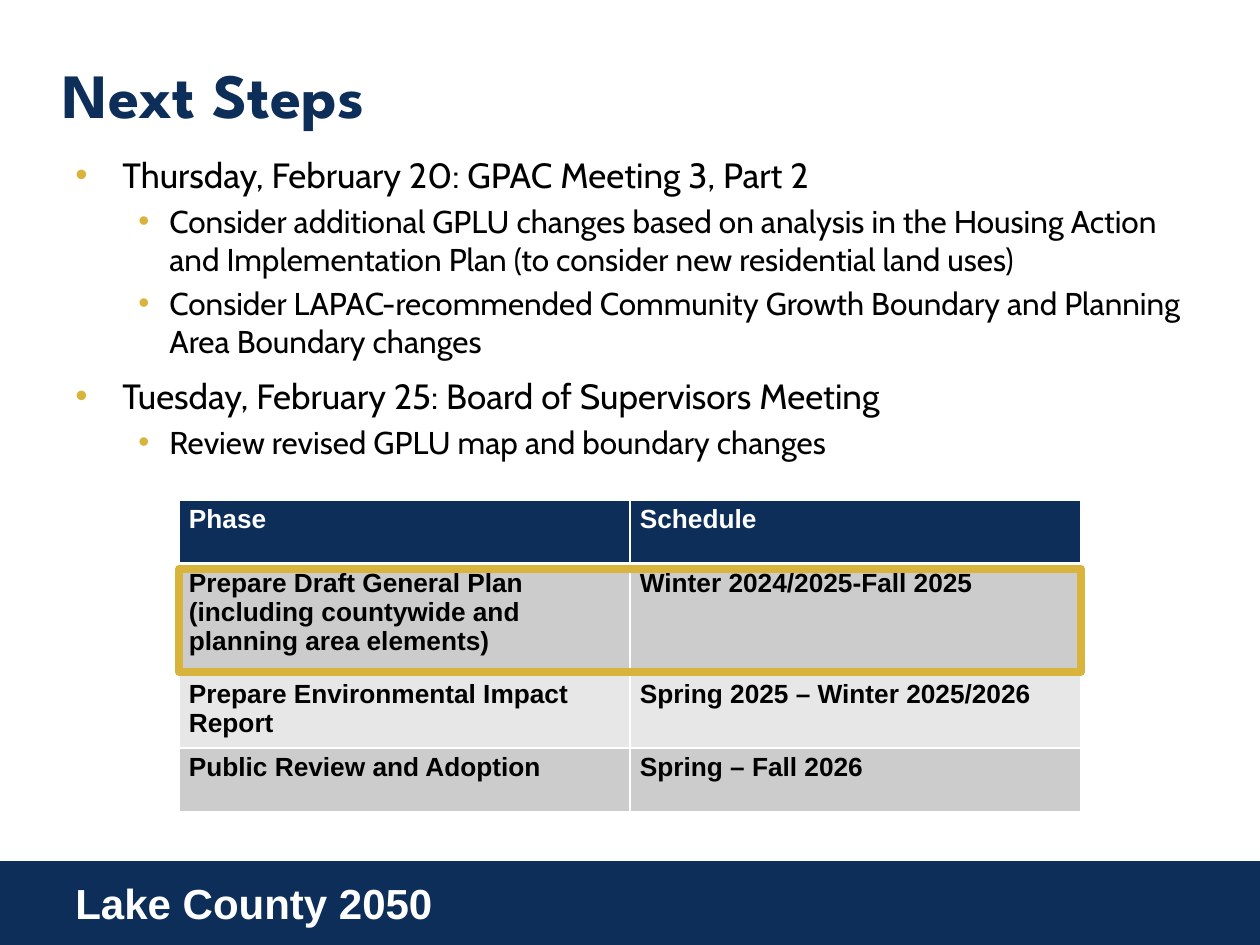
from typing import NamedTuple

from lxml import etree
from pptx import Presentation
from pptx import util as u
from pptx.dml.color import RGBColor
from pptx.enum import shapes, text
from pptx.oxml import ns

EMU_PER_PX = 914400 / 126
NAVY, GOLD, WHITE, BLACK = "0D2E58", "D8B43D", "FFFFFF", "000000"
DARK_GREY, LIGHT_GREY = "CCCCCC", "E7E7E7"


class Box(NamedTuple):
    left: int
    top: int
    width: int
    height: int


class Level(NamedTuple):
    size: int
    line_spacing: float
    space_before: float
    margin: int
    hanging: int


class Item(NamedTuple):
    level: Level
    words: str


class Row(NamedTuple):
    phase: str
    schedule: str
    height: int
    fill: str
    color: str = BLACK


MEETING = Level(20, 1.2, 4, 47, 47)
TOPIC = Level(18, 1.0, 3.6, 94, 31)

AGENDA = [
    Item(MEETING, "Thursday, February 20: GPAC Meeting 3, Part 2"),
    Item(TOPIC, "Consider additional GPLU changes based on analysis in the Housing Action "
                "and Implementation Plan (to consider new residential land uses)"),
    Item(TOPIC, "Consider LAPAC-recommended Community Growth Boundary and Planning "
                "Area Boundary changes"),
    Item(MEETING, "Tuesday, February 25: Board of Supervisors Meeting"),
    Item(TOPIC, "Review revised GPLU map and boundary changes"),
]

PHASES = [
    Row("Phase", "Schedule", 64, NAVY, WHITE),
    Row("Prepare Draft General Plan (including countywide and planning area elements)",
        "Winter 2024/2025-Fall 2025", 111, DARK_GREY),
    Row("Prepare Environmental Impact Report", "Spring 2025 – Winter 2025/2026", 64, LIGHT_GREY),
    Row("Public Review and Adoption", "Spring – Fall 2026", 64, DARK_GREY),
]


def px(length: int) -> u.Emu:
    return u.Emu(round(length * EMU_PER_PX))


def rgb(color: str) -> RGBColor:
    return RGBColor.from_string(color)


def place(box: Box) -> list:
    return [px(length) for length in box]


def write(paragraph, words: str, *, size: int, font: str = "Arial",
          color: str = BLACK, bold: bool = False) -> None:
    run = paragraph.add_run()
    run.text = words
    run.font.size = u.Pt(size)
    run.font.name = font
    run.font.bold = bold
    run.font.color.rgb = rgb(color)


def add_frame(slide, box: Box):
    frame = slide.shapes.add_textbox(*place(box)).text_frame
    frame.word_wrap = True
    return frame


def add_rectangle(slide, box: Box, fill: str = "", line: str = "", line_width: float = 0) -> None:
    rectangle = slide.shapes.add_shape(shapes.MSO_SHAPE.RECTANGLE, *place(box))
    rectangle.shadow.inherit = False
    if fill:
        rectangle.fill.solid()
        rectangle.fill.fore_color.rgb = rgb(fill)
    else:
        rectangle.fill.background()
    if line:
        rectangle.line.color.rgb = rgb(line)
        rectangle.line.width = u.Pt(line_width)
    else:
        rectangle.line.fill.background()


def set_bullet(paragraph, level: Level) -> None:
    properties = paragraph._p.get_or_add_pPr()
    properties.set("marL", str(px(level.margin)))
    properties.set("indent", str(-px(level.hanging)))
    bullet_color = etree.SubElement(properties, ns.qn("a:buClr"))
    etree.SubElement(bullet_color, ns.qn("a:srgbClr"), val=GOLD)
    etree.SubElement(properties, ns.qn("a:buFont"), typeface="Arial")
    etree.SubElement(properties, ns.qn("a:buChar"), char="•")


def add_agenda(slide, box: Box, items: list[Item]) -> None:
    frame = add_frame(slide, box)
    for index, item in enumerate(items):
        paragraph = frame.add_paragraph() if index else frame.paragraphs[0]
        set_bullet(paragraph, item.level)
        paragraph.level = int(item.level is TOPIC)
        paragraph.line_spacing = item.level.line_spacing
        if index:
            paragraph.space_before = u.Pt(item.level.space_before)
        write(paragraph, item.words, size=item.level.size, font="Cabin")


def set_borders(cell, bottom_width: float) -> None:
    properties = cell._tc.get_or_add_tcPr()
    widths = {"lnL": 1, "lnR": 1, "lnT": 1, "lnB": bottom_width}
    for position, (side, width) in enumerate(widths.items()):
        border = etree.Element(ns.qn(f"a:{side}"), w=str(u.Pt(width)))
        fill = etree.SubElement(border, ns.qn("a:solidFill"))
        etree.SubElement(fill, ns.qn("a:srgbClr"), val=WHITE)
        properties.insert(position, border)


def add_schedule(slide, box: Box, rows: list[Row]) -> None:
    table = slide.shapes.add_table(len(rows), 2, *place(box)).table
    for index, row in enumerate(rows):
        table.rows[index].height = px(row.height)
        for cell, words in zip(table.rows[index].cells, (row.phase, row.schedule)):
            cell.margin_left = cell.margin_right = px(10)
            cell.margin_top = cell.margin_bottom = px(5)
            cell.fill.solid()
            cell.fill.fore_color.rgb = rgb(row.fill)
            set_borders(cell, bottom_width=1 if index else 3)
            write(cell.text_frame.paragraphs[0], words, size=15, color=row.color, bold=True)


def main() -> None:
    deck = Presentation()
    deck.slide_width, deck.slide_height = px(1260), px(945)
    slide = deck.slides.add_slide(deck.slide_layouts[6])

    add_rectangle(slide, Box(0, 861, 1260, 84), fill=NAVY)
    footer = add_frame(slide, Box(63, 871, 431, 63))
    write(footer.paragraphs[0], "Lake County 2050", size=24, color=WHITE, bold=True)

    title = add_frame(slide, Box(63, 59, 1134, 69))
    title.margin_left = title.margin_right = title.margin_top = title.margin_bottom = 0
    title.vertical_anchor = text.MSO_ANCHOR.MIDDLE
    write(title.paragraphs[0], "Next Steps", size=36, font="League Spartan",
          color=NAVY, bold=True)

    add_schedule(slide, Box(179, 500, 902, 303), PHASES)
    add_agenda(slide, Box(63, 139, 1148, 433), AGENDA)
    add_rectangle(slide, Box(179, 569, 902, 103), line=GOLD, line_width=4.5)
    deck.save("out.pptx")


if __name__ == "__main__":
    main()
